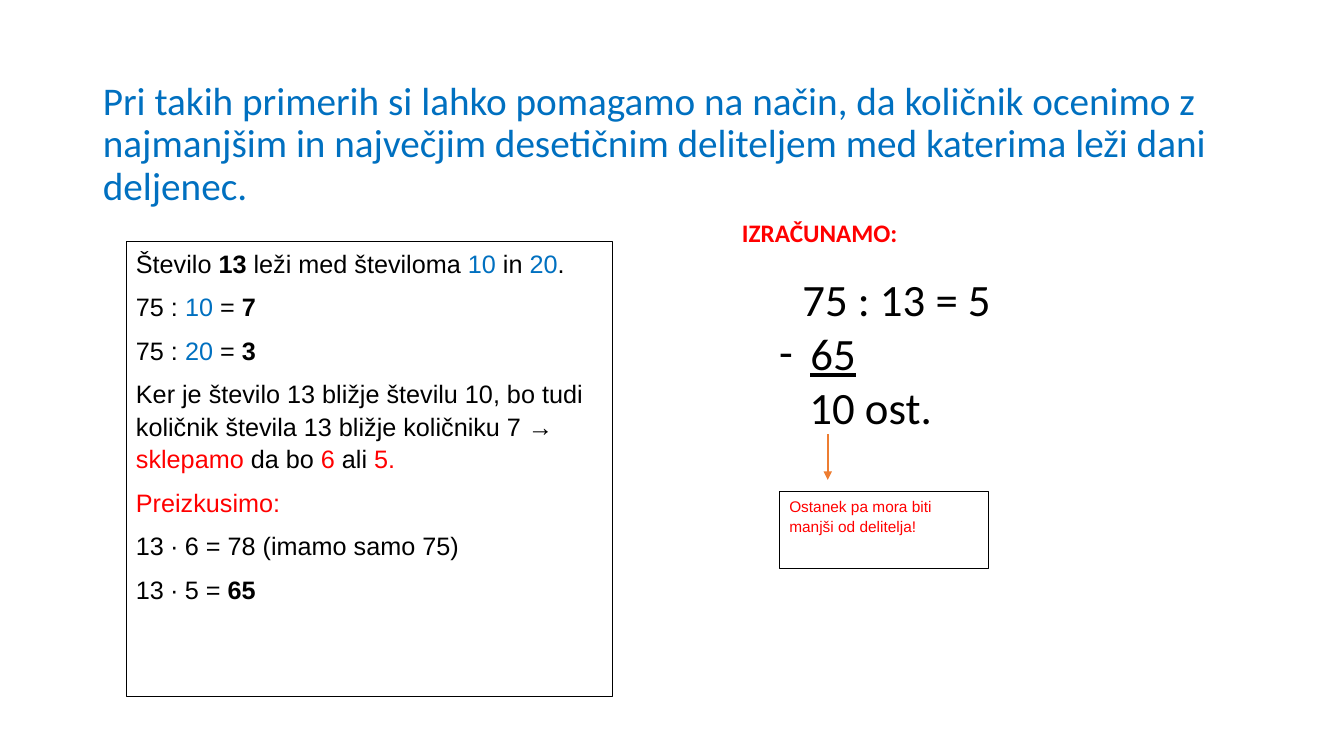
from lxml import etree
from pptx import Presentation
from pptx import util as u
from pptx.dml.color import RGBColor
from pptx.enum import shapes, text
from pptx.oxml.ns import qn

WIDTH, HEIGHT = 13.33, 7.5
BLACK, WHITE, BLUE, RED, ORANGE = "000000", "FFFFFF", "0070C0", "FF0000", "ED7D31"

STYLES = {
    "plain": {},
    "bold": {"bold": True},
    "blue": {"color": BLUE},
    "red": {"color": RED},
    "red bold": {"color": RED, "bold": True},
    "underlined": {"underline": True},
}

TITLE = [[("Pri takih primerih si lahko pomagamo na način, da količnik ocenimo z "
           "najmanjšim in največjim desetičnim deliteljem med katerima leži dani "
           "deljenec.", "blue")]]
ESTIMATE = [
    [("Število ", "plain"), ("13", "bold"), (" leži med številoma ", "plain"),
     ("10", "blue"), (" in ", "plain"), ("20", "blue"), (".", "plain")],
    [("75 : ", "plain"), ("10", "blue"), (" = ", "plain"), ("7", "bold")],
    [("75 : ", "plain"), ("20", "blue"), (" = ", "plain"), ("3", "bold")],
    [("Ker je število 13 bližje številu 10, bo tudi količnik števila 13 bližje "
      "količniku 7 → ", "plain"), ("sklepamo", "red"), (" da bo ", "plain"),
     ("6", "red"), (" ali ", "plain"), ("5.", "red")],
    [("Preizkusimo:", "red")],
    [("13 ∙ 6 = 78 (imamo samo 75)", "plain")],
    [("13 ∙ 5 = ", "plain"), ("65", "bold")],
]
DIVISION = [[("75 : 13 = 5", "plain")], [("65", "underlined")], [("10 ost.", "plain")]]
DIVISION_INDENTS = [0.23, 0.31, 0.3]
HEADING = [[("IZRAČUNAMO:", "red bold")]]
REMAINDER = [[("Ostanek pa mora biti manjši od delitelja!", "red")]]

TITLE_BOX = (0.92, 0.76, 11.5, 1.45)
ESTIMATE_BOX = (1.25, 2.39, 4.82, 4.52)
DIVISION_BOX = (7.63, 2.65, 3.84, 1.72)
HEADING_BOX = (7.26, 2.11, 2.67, 0.4)
REMAINDER_BOX = (7.73, 4.87, 2.07, 0.77)
ARROW = (8.21, 4.31, 8.21, 4.76)

BOXED = {"line_spacing": 1.07, "space_after": u.Pt(8)}


def rgb(value):
    return RGBColor.from_string(value)


def inches(values):
    return [u.Inches(value) for value in values]


def write(shape, content, font, size, **spacing):
    frame = shape.text_frame
    settings = {"word_wrap": True, "auto_size": text.MSO_AUTO_SIZE.NONE,
                "vertical_anchor": text.MSO_ANCHOR.TOP}
    for name, value in settings.items():
        setattr(frame, name, value)
    for index, runs in enumerate(content):
        paragraph = frame.add_paragraph() if index else frame.paragraphs[0]
        for name, value in {"alignment": text.PP_ALIGN.LEFT, **spacing}.items():
            setattr(paragraph, name, value)
        for words, style in runs:
            run = paragraph.add_run()
            run.text = words
            look = {"name": font, "size": u.Pt(size), "color": BLACK, **STYLES[style]}
            run.font.color.rgb = rgb(look.pop("color"))
            for name, value in look.items():
                setattr(run.font, name, value)
    return frame


def add_panel(slide, box):
    panel = slide.shapes.add_shape(shapes.MSO_SHAPE.RECTANGLE, *inches(box))
    panel.shadow.inherit = False
    panel.fill.solid()
    panel.fill.fore_color.rgb = rgb(WHITE)
    panel.line.color.rgb = rgb(BLACK)
    panel.line.width = u.Pt(0.5)
    return panel


def indent_division(frame):
    for paragraph, indent in zip(frame.paragraphs, DIVISION_INDENTS):
        paragraph._p.get_or_add_pPr().set("marL", str(u.Inches(indent)))
    properties = frame.paragraphs[1]._p.get_or_add_pPr()
    properties.set("indent", str(-u.Inches(DIVISION_INDENTS[1])))
    etree.SubElement(properties, qn("a:buFont"), typeface="Calibri")
    etree.SubElement(properties, qn("a:buChar"), char="-")


def add_arrow(slide):
    arrow = slide.shapes.add_connector(shapes.MSO_CONNECTOR.STRAIGHT, *inches(ARROW))
    arrow.line.color.rgb = rgb(ORANGE)
    arrow.line.width = u.Pt(1.5)
    etree.SubElement(arrow.line._get_or_add_ln(), qn("a:tailEnd"), type="triangle")
    etree.SubElement(arrow._element.spPr, qn("a:effectLst"))


def main():
    presentation = Presentation()
    presentation.slide_width, presentation.slide_height = inches((WIDTH, HEIGHT))
    slide = presentation.slides.add_slide(presentation.slide_layouts[5])

    title = slide.shapes.title
    title.left, title.top, title.width, title.height = inches(TITLE_BOX)
    write(title, TITLE, "Calibri", 28, line_spacing=0.9)

    write(add_panel(slide, ESTIMATE_BOX), ESTIMATE, "Arial", 18, **BOXED)
    division = slide.shapes.add_textbox(*inches(DIVISION_BOX))
    indent_division(write(division, DIVISION, "Calibri", 32))
    write(slide.shapes.add_textbox(*inches(HEADING_BOX)), HEADING, "Calibri", 18)
    write(add_panel(slide, REMAINDER_BOX), REMAINDER, "Arial", 11, **BOXED)
    add_arrow(slide)

    presentation.save("out.pptx")


if __name__ == "__main__":
    main()
